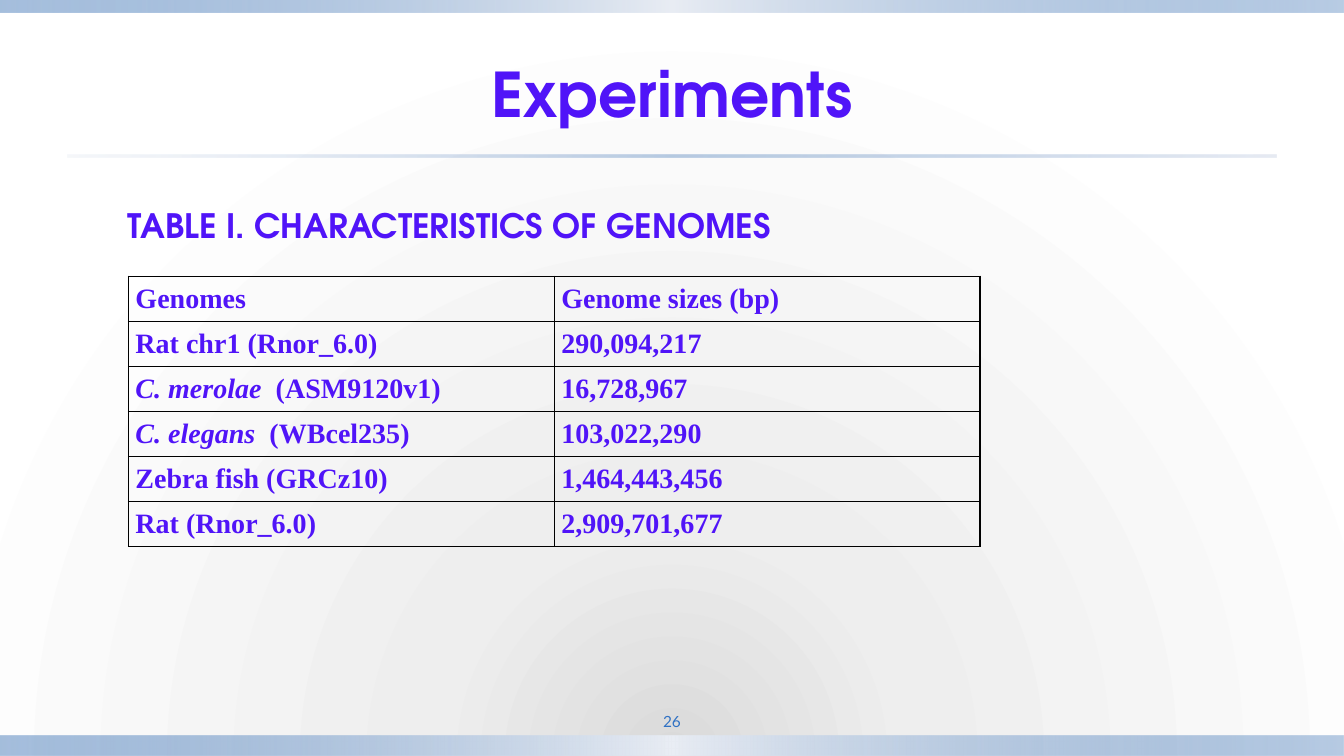
from lxml import etree
from pptx import Presentation
from pptx.dml.color import RGBColor
from pptx.enum import shapes, text
from pptx.oxml import ns
from pptx.util import Pt

COLORS = {"violet": "5014F8", "number": "3172C4", "border": "000000",
          "blue": "4F81BD", "pale": "E9EDF4", "mist": "D0D8E8",
          "bg_core": "DADADA", "bg_mid": "EEEEEE", "bg_edge": "FFFFFF"}
HEADING_FONT = "TeX Gyre Adventor"


def write(paragraph, words, size, font, color="violet", bold=True, italic=False):
    run = paragraph.add_run()
    run.text = words
    run.font.size, run.font.name = Pt(size), font
    run.font.bold, run.font.italic = bold, italic
    run.font.color.rgb = RGBColor.from_string(COLORS[color])


def paint_gradient(owner, stops, direction):
    """Replace the solid fill of owner by a gradient of (position, color, opacity)."""
    marks = "".join(
        f'<a:gs pos="{pos * 1000}"><a:srgbClr val="{COLORS[color]}">'
        f'<a:alpha val="{opacity * 1000}"/></a:srgbClr></a:gs>'
        for pos, color, opacity in stops)
    solid = owner.find(".//" + ns.qn("a:solidFill"))
    solid.getparent().replace(solid, etree.fromstring(
        f'<a:gradFill {ns.nsdecls("a")} rotWithShape="1">'
        f"<a:gsLst>{marks}</a:gsLst>{direction}</a:gradFill>"))


prs = Presentation()
prs.slide_width, prs.slide_height = Pt(960), Pt(540)
slide = prs.slides.add_slide(prs.slide_layouts[5])

# Background
slide.background.fill.solid()
paint_gradient(slide.element,
               [(0, "bg_core", 100), (31, "bg_mid", 100), (100, "bg_edge", 100)],
               '<a:path path="circle">'
               '<a:fillToRect l="50000" t="150000" r="50000" b="0"/></a:path>')

# Edge bands and the rule under the title
band_stops = [(0, "blue", 50), (50, "pale", 100), (100, "blue", 40)]
rule_stops = [(0, "mist", 20), (50, "blue", 40), (100, "mist", 50)]
for left, top, width, height, stops in [(0, 525.6, 960, 14.4, band_stops),
                                        (0, 0, 960, 8.64, band_stops),
                                        (48, 110.7, 864, 1.8, rule_stops)]:
    band = slide.shapes.add_shape(shapes.MSO_SHAPE.RECTANGLE,
                                  Pt(left), Pt(top), Pt(width), Pt(height))
    band.shadow.inherit = False
    band.line.fill.background()
    band.fill.solid()
    paint_gradient(band.element, stops, '<a:lin ang="0" scaled="0"/>')

# Title
title = slide.shapes.title
title.left, title.top, title.width, title.height = Pt(48), Pt(21.6), Pt(864), Pt(90)
title.text_frame.vertical_anchor = text.MSO_ANCHOR.MIDDLE
heading = title.text_frame.paragraphs[0]
heading.alignment = text.PP_ALIGN.CENTER
write(heading, "Experiments", 44, HEADING_FONT)

# Slide number
number = slide.shapes.add_textbox(Pt(432), Pt(504), Pt(96), Pt(22.3)).text_frame
number.word_wrap = True
number.vertical_anchor = text.MSO_ANCHOR.MIDDLE
number.margin_left = number.margin_right = Pt(3.6)
number.margin_top = number.margin_bottom = Pt(3.6)
number.paragraphs[0].alignment = text.PP_ALIGN.CENTER
write(number.paragraphs[0], "26", 11, "Lato", color="number", bold=False)

# Genome table: (italic species, rest of the name), size
genomes = [("", "Genomes", "Genome sizes (bp)"),
           ("", "Rat chr1 (Rnor_6.0)", "290,094,217"),
           ("C. merolae", "  (ASM9120v1)", "16,728,967"),
           ("C. elegans", "  (WBcel235)", "103,022,290"),
           ("", "Zebra fish (GRCz10)", "1,464,443,456"),
           ("", "Rat (Rnor_6.0)", "2,909,701,677")]
table = slide.shapes.add_table(len(genomes), 2, Pt(91.7), Pt(197.3),
                               Pt(608.4), Pt(192.9)).table
table.first_row = table.horz_banding = False
for row, (species, name, size) in enumerate(genomes):
    for column, parts in enumerate([(species, name), ("", size)]):
        cell = table.cell(row, column)
        cell.vertical_anchor = text.MSO_ANCHOR.MIDDLE
        cell.margin_left = cell.margin_right = Pt(5.1)
        cell.margin_top = cell.margin_bottom = 0
        for words, italic in zip(parts, (True, False)):
            if words:
                write(cell.text_frame.paragraphs[0], words, 20,
                      "Times New Roman", italic=italic)
        borders = cell.fill._xPr
        for side in ("lnL", "lnR", "lnT", "lnB"):
            borders.append(etree.fromstring(
                f'<a:{side} {ns.nsdecls("a")} w="12700"><a:solidFill>'
                f'<a:srgbClr val="{COLORS["border"]}"/></a:solidFill></a:{side}>'))
        cell.fill.background()

# Table caption
caption = slide.shapes.add_textbox(Pt(84.2), Pt(142.6), Pt(480), Pt(36)).text_frame
caption.word_wrap = False
caption.auto_size = text.MSO_AUTO_SIZE.SHAPE_TO_FIT_TEXT
caption.vertical_anchor = text.MSO_ANCHOR.MIDDLE
write(caption.paragraphs[0], "TABLE I. CHARACTERISTICS OF GENOMES", 24, HEADING_FONT)

prs.save("out.pptx")
